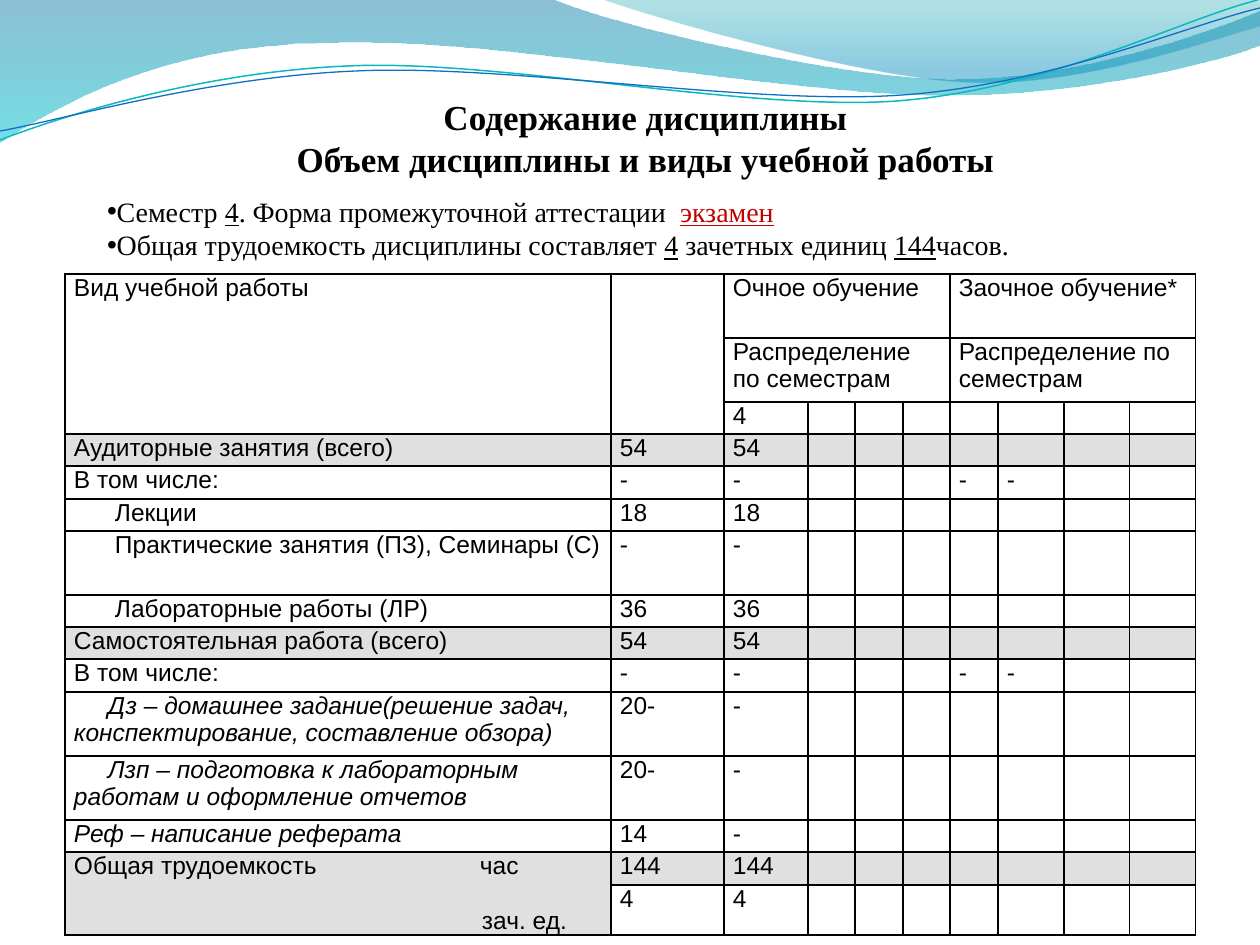
"""Build the slide with the course contents and the table of study hours."""
from lxml.etree import SubElement
from pptx import Presentation
from pptx.dml.color import RGBColor as RGB
from pptx.enum.text import MSO_ANCHOR as Anchor, PP_ALIGN as Align
from pptx.oxml.ns import qn
from pptx.util import Pt

SCALE = 914400 / 126
COLORS = {
    "black": "000000", "red": "C00000", "gray": "E0E0E0",
    "deep": "0074A1", "aqua": "00C6CF", "teal": "00A1A9", "sky": "008BBF",
    "teal line": "0AB8BF", "blue line": "0F6FC6",
}


def px(value):
    return round(value * SCALE)


def add_wave(slide, start, segments, closed):
    points = [(px(s[i]), px(s[i + 1])) for s in segments for i in range(0, len(s), 2)]
    builder = slide.shapes.build_freeform(px(start[0]), px(start[1]))
    builder.add_line_segments(points, close=closed)
    shape = builder.convert_to_shape()
    shape.shadow.inherit = False
    nodes = iter(list(shape._element.iter(qn("a:lnTo"))))
    for segment in segments:
        node = next(nodes)
        if len(segment) == 6:
            curve = node.makeelement(qn("a:cubicBezTo"))
            node.addprevious(curve)
            for corner in (node, next(nodes), next(nodes)):
                curve.append(corner[0])
                corner.getparent().remove(corner)
    return shape


presentation = Presentation()
presentation.slide_width, presentation.slide_height = px(1260), px(945)
slide = presentation.slides.add_slide(presentation.slide_layouts[1])

bands = [
    ((0, 0), [(554, 0), (600, 21, 837, 79, 955, 79), (1075, 79, 1207, 33, 1260, 11), (1260, 45),
              (1239, 55, 1096, 96, 940, 95), (784, 95, 481, 35, 324, 43), (163, 45, 58, 105, 0, 142)],
     [(0, "deep", 45), (1, "aqua", 55)]),
    ((604, 0), [(641, 14, 859, 78, 969, 82), (1079, 87, 1211, 40, 1260, 26), (1260, 0)],
     [(0, "teal", 30), (0.8, "sky", 45)]),
]
for start, segments, stops in bands:
    band = add_wave(slide, start, segments, True)
    band.line.fill.background()
    band.fill.gradient()
    band.fill.gradient_angle = 270
    for stop, (position, color, _) in zip(band.fill.gradient_stops, stops):
        stop.position = position
        stop.color.rgb = RGB.from_string(COLORS[color])
    for element, (_, _, opacity) in zip(band._element.spPr.iter(qn("a:srgbClr")), stops):
        SubElement(element, qn("a:alpha"), val=str(opacity * 1000))

lines = [
    ((0, 140), [(60, 117, 199, 72, 349, 66), (498, 59, 747, 112, 898, 101),
                (1050, 89, 1182, 19, 1258, 0)], "teal line", 0.85),
    ((0, 131), [(59, 121, 207, 77, 357, 71), (508, 64, 752, 106, 903, 95),
                (1053, 84, 1185, 26, 1260, 8)], "blue line", 0.75),
]
for start, segments, color, width in lines:
    wave = add_wave(slide, start, segments, False)
    wave.fill.background()
    wave.line.color.rgb = RGB.from_string(COLORS[color])
    wave.line.width = Pt(width)

title, body = slide.shapes.title, slide.placeholders[1]
for shape, box in ((title, (31, 96, 1229, 84)), (body, (107, 194, 1100, 68))):
    shape.left, shape.top, shape.width, shape.height = map(px, box)
    frame = shape.text_frame
    frame.margin_left = frame.margin_right = frame.margin_top = frame.margin_bottom = 0
    frame.vertical_anchor = Anchor.MIDDLE
    frame.word_wrap = True

title.text_frame.text = "Содержание дисциплины\nОбъем дисциплины и виды учебной работы"
for paragraph in title.text_frame.paragraphs:
    paragraph.alignment = Align.CENTER
    font = paragraph.runs[0].font
    font.name, font.size, font.bold = "Times New Roman", Pt(20), True
    font.color.rgb = RGB.from_string(COLORS["black"])

bullets = [
    [("Семестр ", False), ("4", True), (". Форма промежуточной аттестации  ", False), ("экзамен", True)],
    [("Общая трудоемкость дисциплины составляет ", False), ("4", True), (" зачетных единиц ", False),
     ("144", True), ("часов.", False)],
]
body.text_frame.text = "\n" * (len(bullets) - 1)
for paragraph, parts in zip(body.text_frame.paragraphs, bullets):
    paragraph.space_before = Pt(0)
    properties = paragraph._p.get_or_add_pPr()
    properties.set("marL", "0")
    properties.set("indent", "0")
    SubElement(properties, qn("a:buChar"), char="•")
    for text, underlined in parts:
        run = paragraph.add_run()
        run.text = text
        run.font.name, run.font.size, run.font.underline = "Times New Roman", Pt(16), underlined
        run.font.color.rgb = RGB.from_string(COLORS["red" if text == "экзамен" else "black"])

widths = [546, 113, 84, 47, 48, 47, 48, 66, 66, 66]
heights = [64, 64, 32, 32, 33, 32, 64, 32, 32, 33, 64, 64, 32, 33, 50]
rows = [
    ["Вид учебной работы", "", "Очное обучение", "", "", "", "Заочное обучение*"],
    ["", "", "Распределение по семестрам", "", "", "", "Распределение по семестрам"],
    ["", "", "4"],
    ["Аудиторные занятия (всего)", "54", "54"],
    ["В том числе:", "-", "-", "", "", "", "-", "-"],
    ["Лекции", "18", "18"],
    ["Практические занятия (ПЗ), Семинары (С)", "-", "-"],
    ["Лабораторные работы (ЛР)", "36", "36"],
    ["Самостоятельная работа (всего)", "54", "54"],
    ["В том числе:", "-", "-", "", "", "", "-", "-"],
    ["Дз – домашнее задание(решение задач, конспектирование, составление обзора)", "20-", "-"],
    ["Лзп – подготовка к лабораторным работам и оформление отчетов", "20-", "-"],
    ["Реф – написание реферата", "14", "-"],
    ["Общая трудоемкость\tчас\nзач. ед.", "144", "144"],
    ["", "4", "4"],
]
merges = [(0, 0, 2, 0), (0, 1, 2, 1), (0, 2, 0, 5), (0, 6, 0, 9), (1, 2, 1, 5), (1, 6, 1, 9), (13, 0, 14, 0)]
first_line_indents = {5: 41, 6: 41, 7: 41, 10: 34, 11: 34}
italic_rows, shaded_rows = (10, 11, 12), (3, 8, 13)

table = slide.shapes.add_table(len(rows), len(widths), px(65), px(274), px(sum(widths)), px(sum(heights))).table
table.first_row = table.horz_banding = False
for column, width in zip(table.columns, widths):
    column.width = px(width)
for row, height in zip(table.rows, heights):
    row.height = px(height)

for r, texts in enumerate(rows):
    for c in range(len(widths)):
        cell = table.cell(r, c)
        cell.margin_left = cell.margin_right = px(9)
        cell.margin_top = cell.margin_bottom = 0
        for side in ("lnL", "lnR", "lnT", "lnB"):
            border = SubElement(cell._tc.get_or_add_tcPr(), qn(f"a:{side}"), w=str(Pt(1)))
            SubElement(SubElement(border, qn("a:solidFill")), qn("a:srgbClr"), val=COLORS["black"])
        if r in shaded_rows or (r, c) == (14, 0):
            cell.fill.solid()
            cell.fill.fore_color.rgb = RGB.from_string(COLORS["gray"])
        else:
            cell.fill.background()
        cell.text_frame.text = texts[c] if c < len(texts) else ""
        for paragraph in cell.text_frame.paragraphs:
            for run in paragraph.runs:
                run.font.name, run.font.size = "Arial", Pt(14)
                run.font.italic = c == 0 and r in italic_rows
                run.font.color.rgb = RGB.from_string(COLORS["black"])
            if not paragraph.runs:
                SubElement(paragraph._p, qn("a:endParaRPr"), sz="1400")
        if c == 0 and r in first_line_indents:
            cell.text_frame.paragraphs[0]._p.get_or_add_pPr().set("indent", str(px(first_line_indents[r])))

hours, credits = table.cell(13, 0).text_frame.paragraphs
tabs = SubElement(hours._p.get_or_add_pPr(), qn("a:tabLst"))
SubElement(tabs, qn("a:tab"), pos=str(px(406)), algn="l")
credits._p.get_or_add_pPr().set("marL", str(px(408)))
credits.space_before = Pt(16)

for top, left, bottom, right in merges:
    table.cell(top, left).merge(table.cell(bottom, right))

presentation.save("out.pptx")
